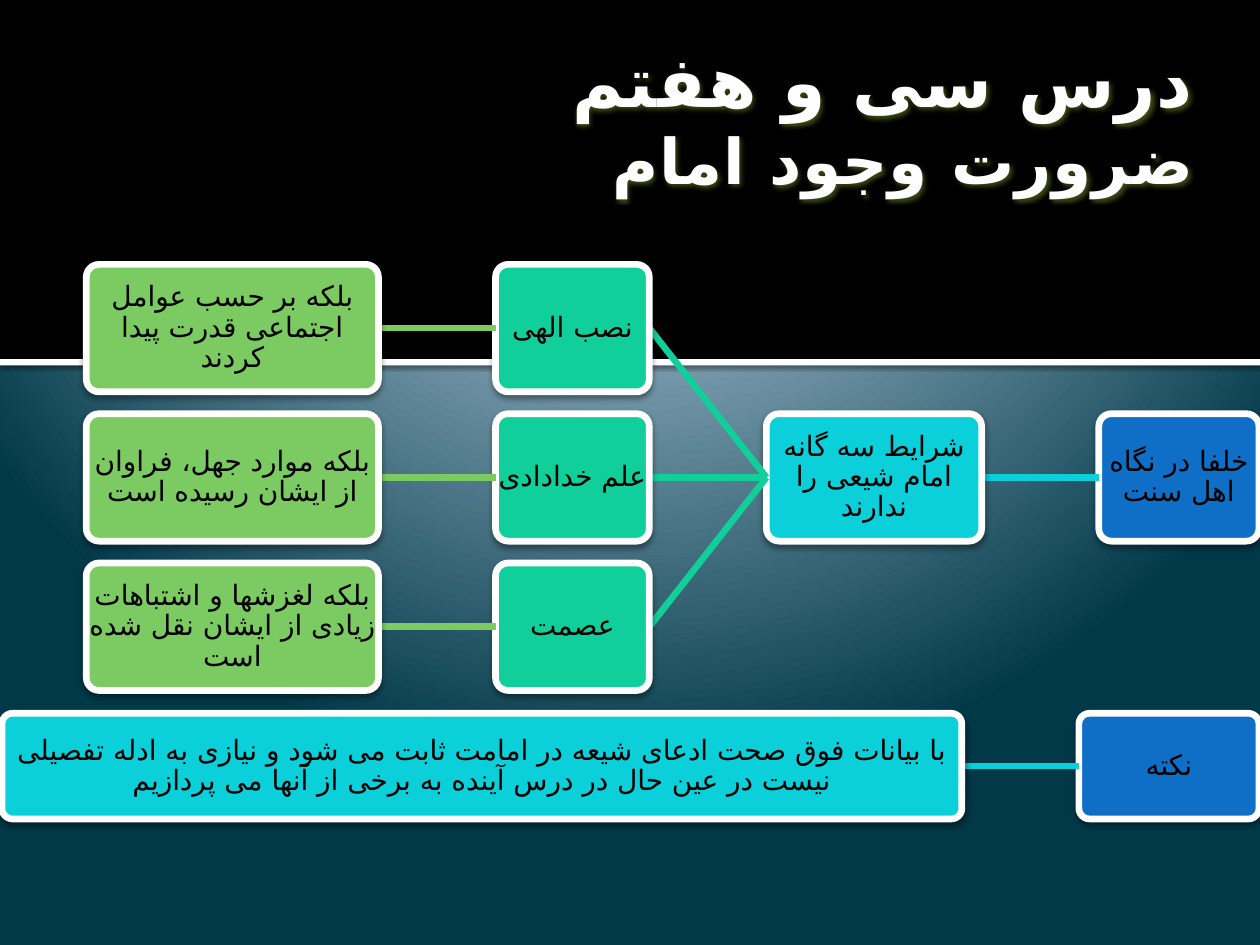
from lxml import etree
from pptx import Presentation
from pptx.dml.color import RGBColor
from pptx.enum import shapes, text
from pptx.oxml import parse_xml
from pptx.oxml.ns import qn
from pptx.util import Cm, Pt

BLACK = RGBColor(0x00, 0x00, 0x00)
WHITE = RGBColor(0xFF, 0xFF, 0xFF)
TITLE_WHITE = RGBColor(0xFE, 0xFE, 0xFE)
OLIVE = RGBColor(0x9B, 0xBB, 0x37)
BLUE = RGBColor(0x0F, 0x6F, 0xC6)
CYAN = RGBColor(0x0B, 0xD0, 0xD9)
TEAL = RGBColor(0x10, 0xCF, 0x9B)
GREEN = RGBColor(0x7C, 0xCA, 0x62)
LEVEL_COLORS = [BLUE, CYAN, TEAL, GREEN]

FONT = "Cabin"
PERSIAN_FONT = "DejaVu Sans"
DRAWING = 'xmlns:a="http://schemas.openxmlformats.org/drawingml/2006/main"'
LEFT_SIDE, RIGHT_SIDE = 1, 3

# All lengths below are in centimetres.
TREE_RIGHT = 25.38
GAP = 2.36
ROW_TOP, ROW_PITCH, ROW_HEIGHT = 5.33, 3.01, 2.57
NOTE_TOP, NOTE_HEIGHT = 14.38, 2.13

# Each node: label, width, row, children.
CALIPHS = ("خلفا در نگاه اهل سنت", 3.23, 1, [
    ("شرایط سه گانه امام شیعی را ندارند", 4.34, 1, [
        ("نصب الهی", 3.1, 0, [
            ("بلکه بر حسب عوامل اجتماعی قدرت پیدا کردند", 5.89, 0, [])]),
        ("علم خدادادی", 3.1, 1, [
            ("بلکه موارد جهل، فراوان از ایشان رسیده است", 5.89, 1, [])]),
        ("عصمت", 3.1, 2, [
            ("بلکه لغزشها و اشتباهات زیادی از ایشان نقل شده است", 5.89, 2, [])]),
    ]),
])
NOTE = ("نکته", 3.63, 0, [
    ("با بیانات فوق صحت ادعای شیعه در امامت ثابت می شود و نیازی به ادله تفصیلی "
     "نیست در عین حال در درس آینده به برخی از آنها می پردازیم", 19.35, 0, []),
])


def set_background(slide):
    fill = slide.background.fill
    fill.gradient()
    gradient = slide.background._cSld.find(".//" + qn("a:gradFill"))
    stops = [(0, "B2CADB"), (12, "B2CADB"), (20, "B0C9DB"), (100, "023949")]
    stop_xml = "".join(
        f'<a:gs pos="{position * 1000}"><a:srgbClr val="{color}"/></a:gs>'
        for position, color in stops)
    gradient.getparent().replace(gradient, parse_xml(
        f'<a:gradFill {DRAWING} rotWithShape="1"><a:gsLst>{stop_xml}</a:gsLst>'
        '<a:path path="circle">'
        '<a:fillToRect l="10000" t="-25000" r="10000" b="125000"/>'
        '</a:path></a:gradFill>'))


def add_shadow(shape, color, opacity, blur, distance):
    """Cast a shadow straight down; blur and distance are in points."""
    shape.shadow.inherit = False
    effects = shape._element.spPr.find(qn("a:effectLst"))
    effects.append(parse_xml(
        f'<a:outerShdw {DRAWING} blurRad="{Pt(blur)}" dist="{Pt(distance)}" '
        f'dir="5400000" algn="ctr" rotWithShape="0"><a:srgbClr val="{color}">'
        f'<a:alpha val="{opacity * 1000}"/></a:srgbClr></a:outerShdw>'))


def add_band(slide, top, height, color):
    band = slide.shapes.add_shape(
        shapes.MSO_SHAPE.RECTANGLE, 0, Cm(top), Cm(25.4), Cm(height))
    band.shadow.inherit = False
    band.fill.solid()
    band.fill.fore_color.rgb = color
    band.line.fill.background()
    return band


def add_text(slide, bounds, content, alignment, anchor, margins):
    """Add a wrapped right-to-left text box holding one paragraph."""
    box = slide.shapes.add_textbox(*bounds)
    frame = box.text_frame
    frame.word_wrap = True
    frame.vertical_anchor = anchor
    frame.margin_left = frame.margin_right = Cm(margins[0])
    frame.margin_top = frame.margin_bottom = Cm(margins[1])
    frame.text = content
    paragraph = frame.paragraphs[0]
    paragraph.alignment = alignment
    paragraph._p.get_or_add_pPr().set("rtl", "1")
    return box


def format_run(run, size, color):
    run.font.size = Pt(size)
    run.font.color.rgb = color
    run.font.name = FONT
    complex_font = etree.SubElement(run._r.get_or_add_rPr(), qn("a:cs"))
    complex_font.set("typeface", PERSIAN_FONT)


def add_title(slide):
    title = add_text(
        slide, (Cm(2.08), Cm(-0.58), Cm(22.25), Cm(4.55)),
        "درس سی و هفتم\vضرورت وجود امام",
        text.PP_ALIGN.RIGHT, text.MSO_ANCHOR.BOTTOM, (0.25, 0))
    add_shadow(title, OLIVE, 40, 2, 1)
    for run, size in zip(title.text_frame.paragraphs[0].runs, (40, 36)):
        format_run(run, size, TITLE_WHITE)
        run.font.bold = True
        properties = run._r.get_or_add_rPr()
        properties.set("spc", "50")
        properties.insert(0, parse_xml(
            f'<a:ln {DRAWING} w="{Pt(1)}"><a:solidFill>'
            f'<a:srgbClr val="{OLIVE}"/></a:solidFill></a:ln>'))


def add_box(slide, left, top, width, height, color, label):
    bounds = Cm(left), Cm(top), Cm(width), Cm(height)
    box = slide.shapes.add_shape(shapes.MSO_SHAPE.ROUNDED_RECTANGLE, *bounds)
    box.adjustments[0] = 0.1
    box.fill.solid()
    box.fill.fore_color.rgb = color
    box.line.color.rgb = WHITE
    box.line.width = Pt(3.82)
    add_shadow(box, BLACK, 38, 3.5, 2)
    # The label needs the full width, which the rounded corners would reduce.
    label_box = add_text(slide, bounds, label, text.PP_ALIGN.CENTER,
                         text.MSO_ANCHOR.MIDDLE, (0.03, 0.03))
    paragraph = label_box.text_frame.paragraphs[0]
    paragraph.line_spacing = 0.9
    format_run(paragraph.runs[0], 16, BLACK)
    return box


def add_link(slide, parent, color):
    """Start a line at the parent's left side; its end is joined later."""
    middle = parent.top + parent.height // 2
    link = slide.shapes.add_connector(
        shapes.MSO_CONNECTOR.STRAIGHT, parent.left, middle, parent.left, middle)
    link.begin_connect(parent, LEFT_SIDE)
    link.line.color.rgb = color
    link.line.width = Pt(3.78)
    etree.SubElement(link._element.spPr, qn("a:effectLst"))
    return link


def add_tree(slide, node, right, top, height, level=0, parent=None):
    """Draw a node and its children leftwards, each link under its child."""
    label, width, row, children = node
    color = LEVEL_COLORS[level]
    link = add_link(slide, parent, color) if parent is not None else None
    left = right - width
    box = add_box(slide, left, top + row * ROW_PITCH, width, height, color, label)
    if link is not None:
        link.end_connect(box, RIGHT_SIDE)
    for child in children:
        add_tree(slide, child, left - GAP, top, height, level + 1, box)


def main():
    presentation = Presentation()
    presentation.slide_width = Cm(25.4)
    presentation.slide_height = Cm(19.05)
    slide = presentation.slides.add_slide(presentation.slide_layouts[6])
    set_background(slide)
    add_band(slide, 0, 7.24, BLACK)
    divider = add_band(slide, 7.24, 0.13, WHITE)
    add_shadow(divider, BLACK, 60, 2.5, 0.8)
    add_title(slide)
    add_tree(slide, CALIPHS, TREE_RIGHT, ROW_TOP, ROW_HEIGHT)
    add_tree(slide, NOTE, TREE_RIGHT, NOTE_TOP, NOTE_HEIGHT)
    presentation.save("out.pptx")


if __name__ == "__main__":
    main()
